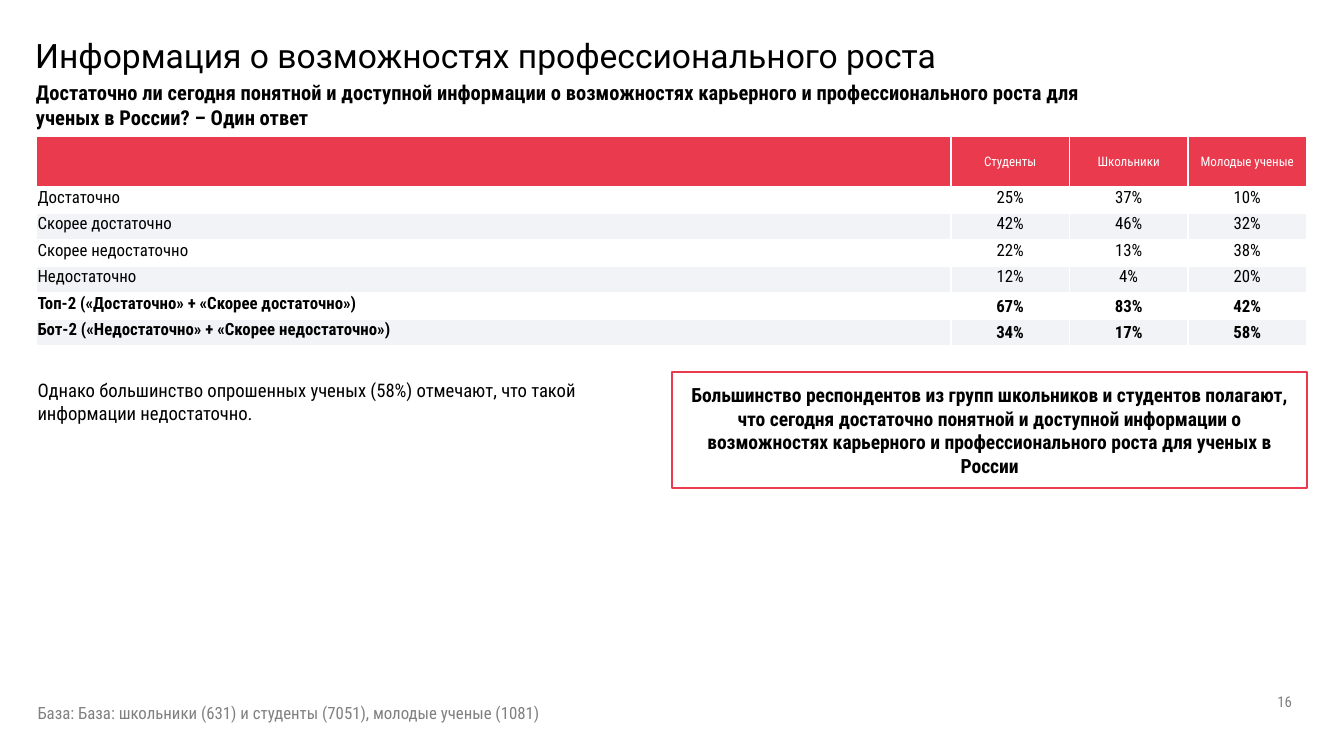
"""Build the survey slide on information about professional growth."""
from lxml import etree
from pptx import Presentation
from pptx import util as u
from pptx.dml.color import RGBColor
from pptx.enum import shapes, text
from pptx.oxml.ns import qn

RED = RGBColor(0xE9, 0x3A, 0x4E)
BAND = RGBColor(0xF2, 0xF3, 0xF6)
WHITE = RGBColor(0xFF, 0xFF, 0xFF)
BLACK = RGBColor(0, 0, 0)
GREY = RGBColor(0x80, 0x80, 0x80)
CONDENSED = "Roboto Condensed"
LEFT, CENTER, RIGHT = text.PP_ALIGN.LEFT, text.PP_ALIGN.CENTER, text.PP_ALIGN.RIGHT
TOP, MIDDLE = text.MSO_ANCHOR.TOP, text.MSO_ANCHOR.MIDDLE

HEADING = "Информация о возможностях профессионального роста"
QUESTION = ("Достаточно ли сегодня понятной и доступной информации о возможностях "
            "карьерного и профессионального роста для ученых в России? – Один ответ")
CONTRAST = "Однако большинство опрошенных ученых (58%) отмечают, что такой информации недостаточно."
CONCLUSION = ("Большинство респондентов из групп школьников и студентов полагают, что сегодня "
              "достаточно понятной и доступной информации о возможностях карьерного и "
              "профессионального роста для ученых в России")
BASE = "База: База: школьники (631) и студенты (7051), молодые ученые (1081)"
PAGE = "16"
GROUPS = ("", "Студенты", "Школьники", "Молодые ученые")
ANSWERS = [
    ("Достаточно", "25%", "37%", "10%"),
    ("Скорее достаточно", "42%", "46%", "32%"),
    ("Скорее недостаточно", "22%", "13%", "38%"),
    ("Недостаточно", "12%", "4%", "20%"),
]
TOTALS = [
    ("Топ-2 («Достаточно» + «Скорее достаточно»)", "67%", "83%", "42%"),
    ("Бот-2 («Недостаточно» + «Скорее недостаточно»)", "34%", "17%", "58%"),
]
COLUMN_WIDTHS = (17.28, 2.24, 2.24, 2.24)
ROW_HEIGHTS = (0.96,) + (0.5,) * 6


def write(frame, words, size, color=BLACK, bold=False, align=LEFT, font=CONDENSED):
    frame.text = words
    paragraph = frame.paragraphs[0]
    paragraph.alignment = align
    paragraph.font.name = font
    paragraph.font.size = u.Pt(size)
    paragraph.font.bold = bold
    paragraph.font.color.rgb = color
    return paragraph


def add_label(slide, box, words, size, anchor=TOP, **look):
    frame = slide.shapes.add_textbox(*map(u.Cm, box)).text_frame
    frame.word_wrap = True
    frame.vertical_anchor = anchor
    return write(frame, words, size, **look)


def add_borders(cell):
    properties = cell._tc.get_or_add_tcPr()
    for position, side in enumerate(("lnL", "lnR", "lnT", "lnB")):
        line = etree.Element(qn(f"a:{side}"), w=str(u.Pt(1)))
        fill = etree.SubElement(line, qn("a:solidFill"))
        etree.SubElement(fill, qn("a:srgbClr"), val=str(WHITE))
        properties.insert(position, line)


def add_answer_table(slide):
    rows = [GROUPS, *ANSWERS, *TOTALS]
    table = slide.shapes.add_table(
        len(rows), len(GROUPS), u.Cm(0.69), u.Cm(2.57),
        u.Cm(sum(COLUMN_WIDTHS)), u.Cm(sum(ROW_HEIGHTS))).table
    for column, width in zip(table.columns, COLUMN_WIDTHS):
        column.width = u.Cm(width)
    for r, (row, height) in enumerate(zip(rows, ROW_HEIGHTS)):
        table.rows[r].height = u.Cm(height)
        header, total = r == 0, row in TOTALS
        for c, words in enumerate(row):
            cell = table.cell(r, c)
            cell.margin_left = cell.margin_right = cell.margin_top = u.Cm(0.02)
            cell.margin_bottom = 0
            cell.vertical_anchor = MIDDLE if header or (total and c) else TOP
            cell.fill.solid()
            cell.fill.fore_color.rgb = RED if header else WHITE if r % 2 else BAND
            add_borders(cell)
            write(cell.text_frame, words, 7 if header else 9,
                  WHITE if header else BLACK, total, CENTER if c else LEFT)


def add_conclusion(slide):
    callout = slide.shapes.add_shape(
        shapes.MSO_SHAPE.RECTANGLE, *map(u.Cm, (12.7, 7.04, 12.01, 2.18)))
    callout.shadow.inherit = False
    callout.fill.background()
    callout.line.color.rgb = RED
    callout.line.width = u.Pt(1)
    callout.text_frame.word_wrap = True
    callout.text_frame.vertical_anchor = MIDDLE
    write(callout.text_frame, CONCLUSION, 10.5, bold=True, align=CENTER)


def add_heading(slide):
    title = slide.shapes.title
    title.left, title.top, title.width, title.height = map(u.Cm, (0.41, 0.38, 21.89, 2.77))
    title.text_frame.margin_top = u.Cm(0.33)
    title.text_frame.vertical_anchor = TOP
    write(title.text_frame, HEADING, 18, font="Roboto").line_spacing = u.Pt(20)


def main():
    deck = Presentation()
    deck.slide_width, deck.slide_height = u.Cm(25.4), u.Cm(14.29)
    slide = deck.slides.add_slide(deck.slide_layouts[5])
    add_heading(slide)
    add_label(slide, (18.95, 12.88, 5.72, 0.76), PAGE, 8, MIDDLE, color=GREY, align=RIGHT)
    add_conclusion(slide)
    add_label(slide, (0.46, 7.04, 12.24, 1.12), CONTRAST, 10)
    add_label(slide, (0.43, 1.37, 20.93, 1.78), QUESTION, 11, bold=True).line_spacing = 1.02
    add_answer_table(slide)
    add_label(slide, (0.46, 13.16, 12.24, 0.64), BASE, 9, color=GREY)
    deck.save("out.pptx")


if __name__ == "__main__":
    main()
